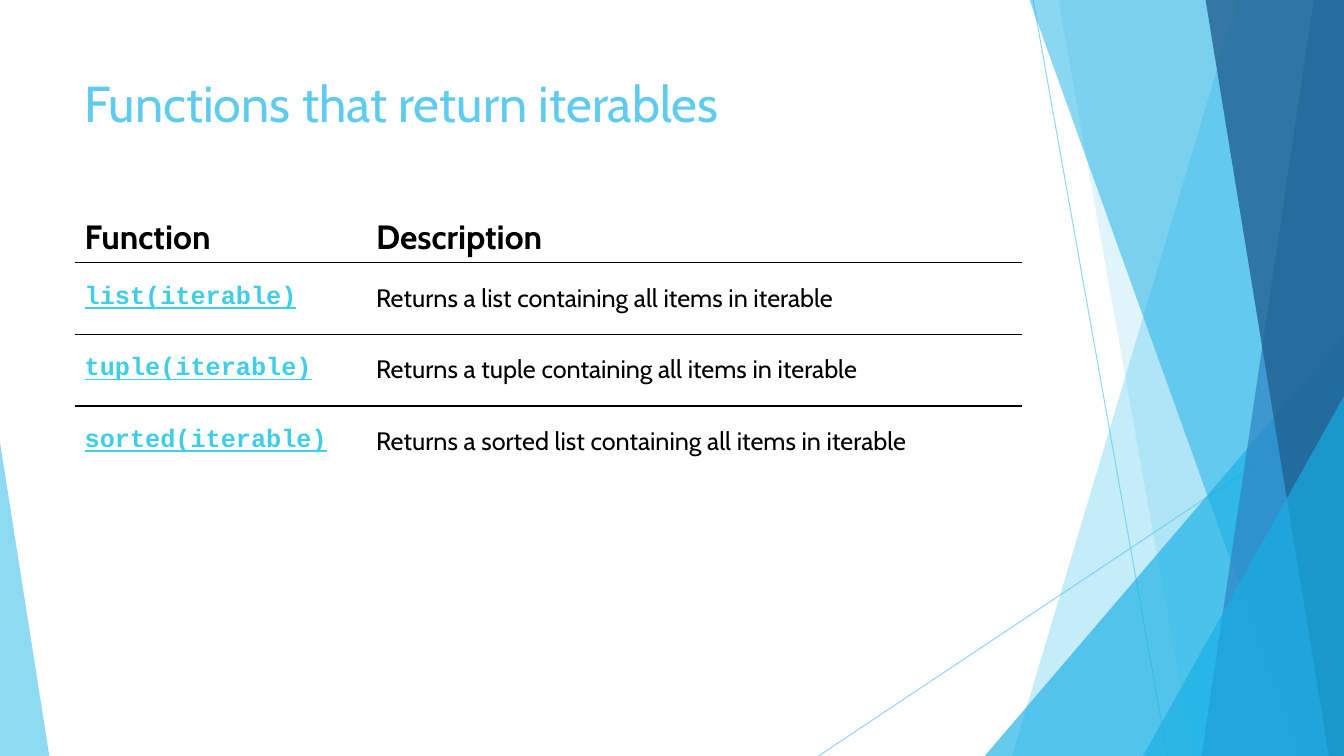
from lxml.etree import SubElement
from pptx import Presentation
from pptx.dml.color import RGBColor
from pptx.enum.shapes import MSO_CONNECTOR as CONN, MSO_SHAPE as SHAPE
from pptx.enum.text import MSO_ANCHOR as ANCHOR
from pptx.oxml.ns import qn
from pptx.util import Inches, Pt

# Lengths below are percentages of the slide's width (col) or height (row)
WIDTH, HEIGHT = Inches(13.33), Inches(7.5)
COLORS = {"sky": "5FCBEF", "cyan": "17B0E4", "blue": "2E83C3",
          "navy": "226292", "code": "3FCDE7", "text": "000000"}
BODY, CODE = "Cabin", "Courier New"
PLAIN_TABLE = "{2D5ABB26-0587-4C30-8999-92F81FD0307C}"

HEADER = ("Function", "Description")
FUNCTIONS = [
    ("list(iterable)", "Returns a list containing all items in iterable"),
    ("tuple(iterable)", "Returns a tuple containing all items in iterable"),
    ("sorted(iterable)", "Returns a sorted list containing all items in iterable"),
]


def col(share):
    return round(WIDTH * share / 100)


def row(share):
    return round(HEIGHT * share / 100)


def rgb(name):
    return RGBColor.from_string(COLORS[name])


def set_alpha(fill_parent, percent):
    color = fill_parent.find(".//" + qn("a:srgbClr"))
    SubElement(color, qn("a:alpha"), val=str(percent * 1000))


def paint(shape, color, alpha):
    shape.shadow.inherit = False
    shape.fill.solid()
    shape.fill.fore_color.rgb = rgb(color)
    set_alpha(shape._element.spPr, alpha)
    shape.line.fill.background()


def add_ray(s, x1, y1, x2, y2):
    ray = s.shapes.add_connector(CONN.STRAIGHT, col(x1), row(y1), col(x2), row(y2))
    ray.line.color.rgb = rgb("sky")
    ray.line.width = Pt(0.75)
    set_alpha(ray._element.spPr, 70)
    SubElement(ray._element.spPr, qn("a:effectLst"))


def add_band(s, top, bottom, color, alpha):
    """Full-height band from a slanted left edge to the slide's right edge."""
    builder = s.shapes.build_freeform(col(top), 0)
    builder.add_line_segments([(WIDTH, 0), (WIDTH, HEIGHT), (col(bottom), HEIGHT)])
    paint(builder.convert_to_shape(), color, alpha)


def add_corner(s, left, right, top, apex, color, alpha):
    """Right triangle standing on the slide's bottom edge."""
    corner = s.shapes.add_shape(SHAPE.ISOSCELES_TRIANGLE, col(left), row(top),
                                col(right - left), row(100 - top))
    corner.adjustments[0] = apex
    paint(corner, color, alpha)


def write(p, text, size, color, name=BODY, bold=False, underline=False):
    p.text = text
    font = p.font
    font.size, font.name, font.bold, font.underline = Pt(size), name, bold, underline
    font.color.rgb = rgb(color)


def add_title(s, text):
    tf = s.shapes.add_textbox(col(5.55), row(8.93), col(70.5), row(19.2)).text_frame
    tf.word_wrap = True
    write(tf.paragraphs[0], text, 36, "sky")


def add_rule(cell, side):
    tc_pr = cell._tc.get_or_add_tcPr()
    ln = SubElement(tc_pr, qn("a:" + side), w=str(Pt(1)))
    SubElement(SubElement(ln, qn("a:solidFill")), qn("a:srgbClr"), val=COLORS["text"])


def add_function_table(s):
    frame = s.shapes.add_table(len(FUNCTIONS) + 1, 2, col(5.55), row(28.1),
                               col(70.5), row(35.1))
    table = frame.table
    table.first_row = table.horz_banding = False
    table._tbl.tblPr.find(qn("a:tableStyleId")).text = PLAIN_TABLE
    for column, share in zip(table.columns, (21.68, 48.82)):
        column.width = col(share)

    last = len(FUNCTIONS)
    for i, texts in enumerate([HEADER, *FUNCTIONS]):
        table.rows[i].height = row(9.47 if i else 6.67)
        for j, text in enumerate(texts):
            cell = table.cell(i, j)
            p = cell.text_frame.paragraphs[0]
            if i == 0:
                write(p, text, 24, "text", bold=True)
            else:
                cell.margin_top = cell.margin_bottom = Inches(0.2)
                if j == 0:
                    write(p, text, 18, "code", CODE, bold=True, underline=True)
                else:
                    write(p, text, 18, "text")
            if i == last and j == 1:
                cell.vertical_anchor = ANCHOR.MIDDLE
            # Rules between rows, then the empty fill
            if i == last:
                add_rule(cell, "lnT")
            else:
                add_rule(cell, "lnB")
            cell.fill.background()


def add_backdrop(s):
    add_ray(s, 76.87, 0, 86.87, 100)
    add_ray(s, 100, 53.7, 60.9, 100)
    add_band(s, 92.1, 75.3, "sky", 36)
    add_band(s, 78.75, 88.75, "sky", 20)
    add_corner(s, 73.27, 100, 44.4, 1, "cyan", 66)
    add_band(s, 76.6, 96.8, "cyan", 50)
    add_band(s, 97.75, 89.4, "blue", 70)
    add_band(s, 89.7, 98.87, "navy", 80)
    add_corner(s, 85.05, 100, 52.4, 1, "cyan", 66)
    add_corner(s, 0, 3.67, 58.53, 0, "sky", 70)


def main():
    prs = Presentation()
    prs.slide_width, prs.slide_height = WIDTH, HEIGHT
    s = prs.slides.add_slide(prs.slide_layouts[6])
    add_backdrop(s)
    add_title(s, "Functions that return iterables")
    add_function_table(s)
    prs.save("out.pptx")


if __name__ == "__main__":
    main()
